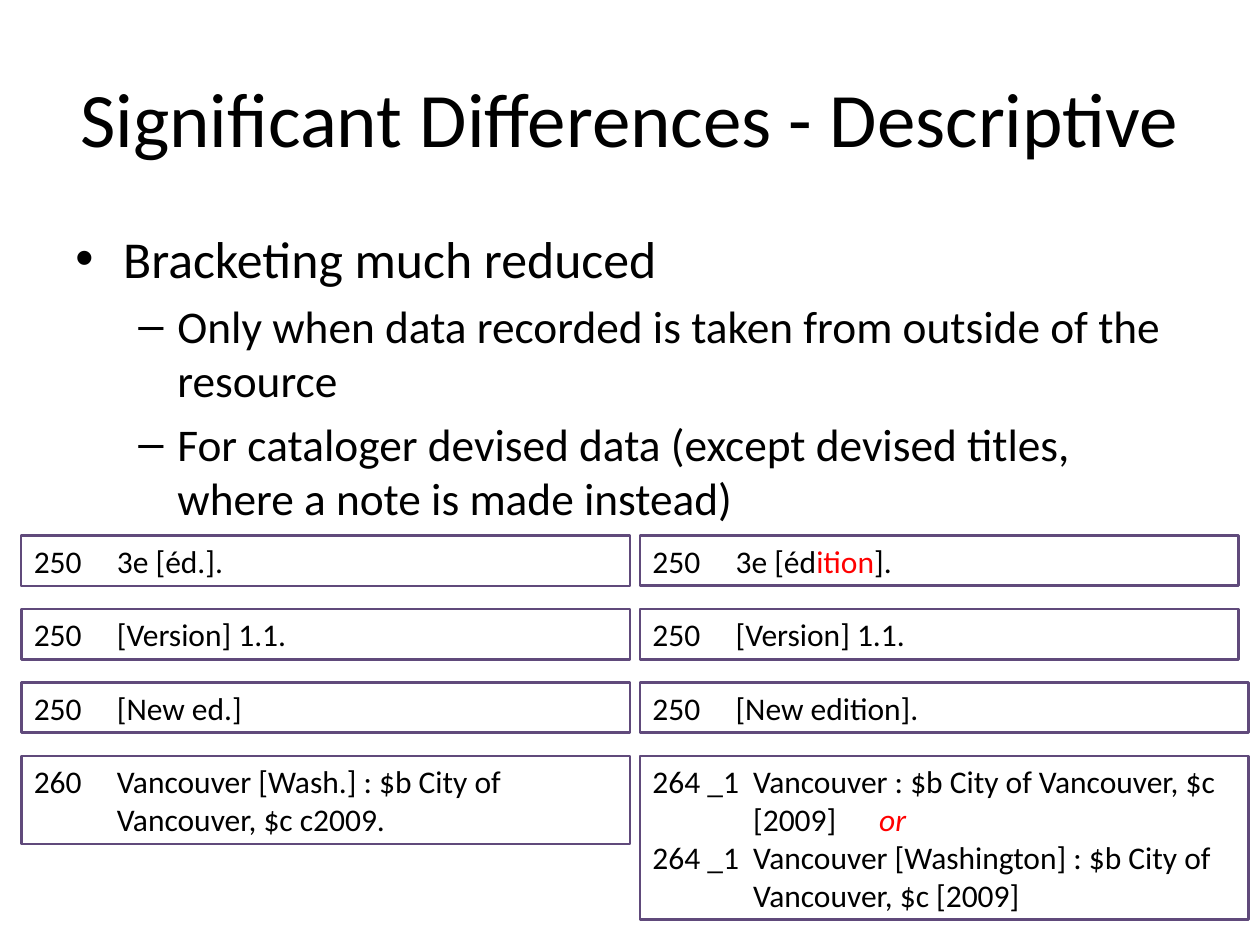
from lxml import etree
from pptx import Presentation
from pptx.dml.color import RGBColor
from pptx.enum.shapes import MSO_SHAPE
from pptx.enum.text import MSO_ANCHOR, MSO_AUTO_SIZE, PP_ALIGN
from pptx.oxml.ns import qn
from pptx.util import Inches, Pt

RECTANGLE = MSO_SHAPE.RECTANGLE
TOP, MIDDLE = MSO_ANCHOR.TOP, MSO_ANCHOR.MIDDLE
LEFT, CENTER = PP_ALIGN.LEFT, PP_ALIGN.CENTER
GROW = MSO_AUTO_SIZE.SHAPE_TO_FIT_TEXT
FONT = "Calibri"
BLACK, RED, PURPLE = "000000", "FF0000", "604A7B"

BULLETS = [
    ("•", 29.6, 0.38, 0.38, "Bracketing much reduced"),
    ("–", 25.9, 0.81, 0.31, "Only when data recorded is taken from outside of the resource"),
    ("–", 25.9, 0.81, 0.31,
     "For cataloger devised data (except devised titles, where a note is made instead)"),
]

OLD_INDENT, NEW_INDENT, OR_STOP = 0.66, 0.8, 1.84
OLD_RECORDS = [
    [("250", ["3e [éd.]."])],
    [("250", ["[Version] 1.1."])],
    [("250", ["[New ed.]"])],
    [("260", ["Vancouver [Wash.] : $b City of"]), ("", ["Vancouver, $c c2009."])],
]
NEW_RECORDS = [
    [("250", ["3e [éd", ("ition", RED, False), "]."])],
    [("250", ["[Version] 1.1."])],
    [("250", ["[New edition]."])],
    [("264 _1", ["Vancouver : $b City of Vancouver, $c"]),
     ("", ["[2009]\t", ("or", RED, True)]),
     ("264 _1", ["Vancouver [Washington] : $b City of"]),
     ("", ["Vancouver, $c [2009]"])],
]


def color(value):
    return RGBColor.from_string(value)


def add_run(paragraph, text, size, shade=BLACK, italic=False):
    run = paragraph.add_run()
    run.text = text
    run.font.name = FONT
    run.font.size = Pt(size)
    run.font.italic = italic
    run.font.color.rgb = color(shade)


def set_indent(paragraph, margin, hang):
    properties = paragraph._p.get_or_add_pPr()
    properties.set("marL", str(Inches(margin)))
    properties.set("indent", str(-Inches(hang)))
    return properties


def next_paragraph(frame, index):
    return frame.add_paragraph() if index else frame.paragraphs[0]


def add_title(slide, left, top, width, height):
    frame = slide.shapes.add_textbox(
        Inches(left), Inches(top), Inches(width), Inches(height)).text_frame
    frame.word_wrap = True
    frame.vertical_anchor = MIDDLE
    heading = frame.paragraphs[0]
    heading.alignment = CENTER
    add_run(heading, "Significant Differences - Descriptive", 44)


def add_bullets(slide, left, top, width, height):
    frame = slide.shapes.add_textbox(
        Inches(left), Inches(top), Inches(width), Inches(height)).text_frame
    frame.word_wrap = True
    for index, (mark, size, margin, hang, text) in enumerate(BULLETS):
        point = next_paragraph(frame, index)
        point.space_before = Pt(round(size * 0.2, 1))
        properties = set_indent(point, margin, hang)
        etree.SubElement(properties, qn("a:buFont"), typeface="Arial")
        etree.SubElement(properties, qn("a:buChar"), char=mark)
        add_run(point, text, size)


def add_record(slide, left, top, width, height, lines, indent, weight):
    box = slide.shapes.add_shape(
        RECTANGLE, Inches(left), Inches(top), Inches(width), Inches(height))
    box.shadow.inherit = False
    box.fill.background()
    box.line.color.rgb = color(PURPLE)
    box.line.width = Pt(weight)
    frame = box.text_frame
    frame.word_wrap = True
    frame.auto_size = GROW
    frame.vertical_anchor = TOP
    for index, (tag, parts) in enumerate(lines):
        field = next_paragraph(frame, index)
        field.alignment = LEFT
        properties = set_indent(field, indent, indent if tag else 0)
        if "\t" in parts[0]:
            stops = etree.SubElement(properties, qn("a:tabLst"))
            etree.SubElement(stops, qn("a:tab"), pos=str(Inches(OR_STOP)), algn="l")
        if tag:
            add_run(field, tag + "\t", 18)
        for part in parts:
            text, shade, italic = (part, BLACK, False) if isinstance(part, str) else part
            add_run(field, text, 18, shade, italic)


def add_comparison(slide, left, top, column_width, gap, row_pitch):
    right = left + column_width + gap
    for row, (old, new) in enumerate(zip(OLD_RECORDS, NEW_RECORDS)):
        row_top = top + row * row_pitch
        new_width = column_width - gap if row < 2 else column_width
        new_indent = NEW_INDENT if len(new) > 1 else OLD_INDENT
        add_record(slide, left, row_top, column_width, 0.1 + 0.3 * len(old),
                   old, OLD_INDENT, 1.5 if row else 1.25)
        add_record(slide, right, row_top, new_width, 0.1 + 0.3 * len(new),
                   new, new_indent, 1.5)


def main():
    deck = Presentation()
    deck.slide_width, deck.slide_height = Inches(10), Inches(7.5)
    slide = deck.slides.add_slide(deck.slide_layouts[6])
    add_title(slide, 0.5, 0.3, 9, 1.25)
    add_bullets(slide, 0.5, 1.75, 9, 2.25)
    add_comparison(slide, 0.17, 4.25, 4.83, 0.08, 7 / 12)
    deck.save("out.pptx")


if __name__ == "__main__":
    main()
